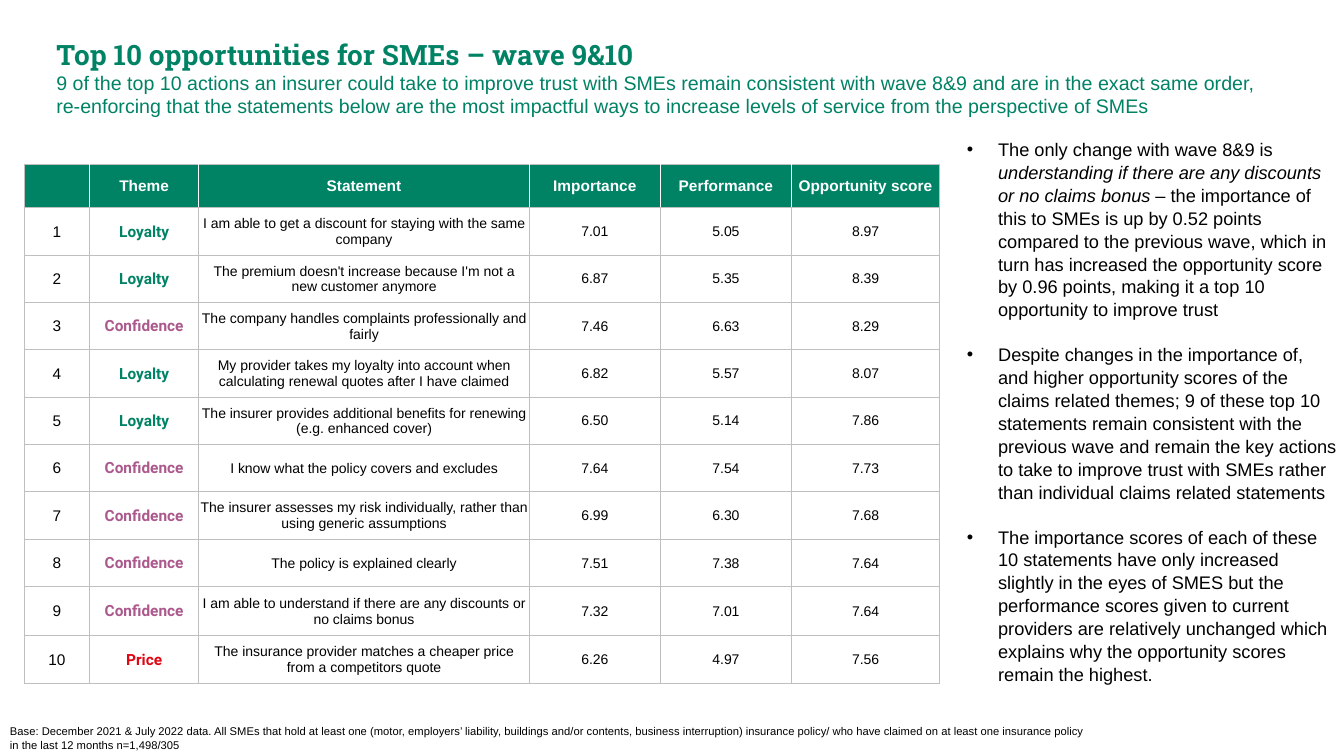
"""Build the slide on the top 10 trust opportunities for SMEs."""
from dataclasses import dataclass

from lxml.etree import SubElement
from pptx import Presentation
from pptx.dml.color import RGBColor as Color
from pptx.enum.text import MSO_ANCHOR as Anchor, PP_ALIGN as Align
from pptx.oxml.ns import qn
from pptx.util import Inches, Pt

TITLE = "Top 10 opportunities for SMEs – wave 9&10"
SUBTITLE = (
    "9 of the top 10 actions an insurer could take to improve trust with SMEs remain consistent "
    "with wave 8&9 and are in the exact same order, re-enforcing that the statements below are the "
    "most impactful ways to increase levels of service from the perspective of SMEs"
)
HEADERS = ["", "Theme", "Statement", "Importance", "Performance", "Opportunity score"]
OPPORTUNITIES = [
    ("Loyalty", "I am able to get a discount for staying with the same company", "7.01", "5.05", "8.97"),
    ("Loyalty", "The premium doesn't increase because I'm not a new customer anymore", "6.87", "5.35", "8.39"),
    ("Confidence", "The company handles complaints professionally and fairly", "7.46", "6.63", "8.29"),
    ("Loyalty", "My provider takes my loyalty into account when calculating renewal quotes after I have claimed",
     "6.82", "5.57", "8.07"),
    ("Loyalty", "The insurer provides additional benefits for renewing (e.g. enhanced cover)",
     "6.50", "5.14", "7.86"),
    ("Confidence", "I know what the policy covers and excludes", "7.64", "7.54", "7.73"),
    ("Confidence", "The insurer assesses my risk individually, rather than using generic assumptions",
     "6.99", "6.30", "7.68"),
    ("Confidence", "The policy is explained clearly", "7.51", "7.38", "7.64"),
    ("Confidence", "I am able to understand if there are any discounts or no claims bonus",
     "7.32", "7.01", "7.64"),
    ("Price", "The insurance provider matches a cheaper price from a competitors quote",
     "6.26", "4.97", "7.56"),
]
COMMENTS = [
    [("The only change with wave 8&9 is ", False),
     ("understanding if there are any discounts or no claims bonus ", True),
     ("– the importance of this to SMEs is up by 0.52 points compared to the previous wave, which in "
      "turn has increased the opportunity score by 0.96 points, making it a top 10 opportunity to "
      "improve trust", False)],
    [("Despite changes in the importance of, and higher opportunity scores of the claims related "
      "themes; 9 of these top 10 statements remain consistent with the previous wave and remain the "
      "key actions to take to improve trust with SMEs rather than individual claims related "
      "statements", False)],
    [("The importance scores of each of these 10 statements have only increased slightly in the eyes "
      "of SMES but the performance scores given to current providers are relatively unchanged which "
      "explains why the opportunity scores remain the highest.", False)],
]
BASE_NOTE = (
    "Base: December 2021 & July 2022 data. All SMEs that hold at least one (motor, employers’ "
    "liability, buildings and/or contents, business interruption) insurance policy/ who have claimed "
    "on at least one insurance policy in the last 12 months n=1,498/305"
)
COLUMN_WIDTHS = [0.65, 1.08, 3.28, 1.3, 1.3, 1.47]
ROW_HEIGHTS = [0.43] + [0.47] * 8 + [0.49, 0.47]


@dataclass(frozen=True)
class Theme:
    """Colours, fonts and type sizes."""
    green: str = "008265"
    purple: str = "AB588C"
    red: str = "E20613"
    black: str = "000000"
    white: str = "FFFFFF"
    grey: str = "BFBFBF"
    body_font: str = "Arial"
    title_font: str = "Roboto Slab"
    label_font: str = "Roboto"
    title: int = 20
    subtitle: int = 14
    comment: int = 13
    label: int = 11
    statement: int = 10
    note: int = 8


THEME = Theme()
LABEL_COLOURS = {"Loyalty": THEME.green, "Confidence": THEME.purple, "Price": THEME.red}


def style(paragraph, size, colour=THEME.black, font=THEME.body_font, bold=False):
    for run in paragraph.runs:
        run.font.size = Pt(size)
        run.font.name = font
        run.font.bold = bold
        run.font.color.rgb = Color.from_string(colour)


def add_text_box(slide, left, top, width, height, inset=(0.1, 0.05)):
    frame = slide.shapes.add_textbox(*map(Inches, (left, top, width, height))).text_frame
    frame.word_wrap = True
    frame.margin_left = frame.margin_right = Inches(inset[0])
    frame.margin_top = frame.margin_bottom = Inches(inset[1])
    return frame


def add_bullet(paragraph, indent):
    properties = paragraph._p.get_or_add_pPr()
    properties.set("marL", str(Inches(indent)))
    properties.set("indent", str(-Inches(indent)))
    SubElement(properties, qn("a:buFont")).set("typeface", THEME.body_font)
    SubElement(properties, qn("a:buChar")).set("char", "•")


def set_borders(cell, **white_sides):
    properties = cell._tc.get_or_add_tcPr()
    for position, side in enumerate("LRTB"):
        white = white_sides.get(side, False)
        line = properties.makeelement(qn(f"a:ln{side}"), {"w": str(Pt(1 if white else 0.75))})
        fill = SubElement(line, qn("a:solidFill"))
        SubElement(fill, qn("a:srgbClr")).set("val", THEME.white if white else THEME.grey)
        properties.insert(position, line)


def fill_cell(cell, text, fill, **text_style):
    cell.text = text
    cell.vertical_anchor = Anchor.MIDDLE
    cell.margin_left = cell.margin_right = cell.margin_top = Inches(0.01)
    cell.margin_bottom = 0
    cell.fill.solid()
    cell.fill.fore_color.rgb = Color.from_string(fill)
    paragraph = cell.text_frame.paragraphs[0]
    paragraph.alignment = Align.CENTER
    style(paragraph, **text_style)


def add_score_table(slide):
    frame = slide.shapes.add_table(
        len(ROW_HEIGHTS), len(COLUMN_WIDTHS), Inches(0.24), Inches(1.63),
        Inches(sum(COLUMN_WIDTHS)), Inches(sum(ROW_HEIGHTS)))
    table = frame.table
    table.horz_banding = False
    for column, width in zip(table.columns, COLUMN_WIDTHS):
        column.width = Inches(width)
    for row, height in zip(table.rows, ROW_HEIGHTS):
        row.height = Inches(height)

    last = len(HEADERS) - 1
    for index, header in enumerate(HEADERS):
        cell = table.cell(0, index)
        fill_cell(cell, header, THEME.green, size=THEME.label, colour=THEME.white, bold=True)
        set_borders(cell, L=index > 0, R=index < last)

    for rank, opportunity in enumerate(OPPORTUNITIES, 1):
        label_style = dict(size=THEME.label, colour=LABEL_COLOURS[opportunity[0]],
                           font=THEME.label_font, bold=True)
        styles = [dict(size=THEME.label), label_style] + [dict(size=THEME.statement)] * 4
        for index, (text, text_style) in enumerate(zip((str(rank), *opportunity), styles)):
            cell = table.cell(rank, index)
            fill_cell(cell, text, THEME.white, **text_style)
            set_borders(cell)


def add_comments(slide):
    frame = add_text_box(slide, 9.59, 1.36, 3.67, 5.53, inset=(0, 0))
    for index, comment in enumerate(COMMENTS):
        paragraph = frame.add_paragraph() if index else frame.paragraphs[0]
        paragraph.line_spacing = 1.05
        if index:
            paragraph.space_before = Pt(15.6)
        add_bullet(paragraph, 0.31)
        for text, italic in comment:
            run = paragraph.add_run()
            run.text = text
            run.font.italic = italic
        style(paragraph, THEME.comment)


def main():
    presentation = Presentation()
    presentation.slide_width, presentation.slide_height = Inches(13.33), Inches(7.5)
    slide = presentation.slides.add_slide(presentation.slide_layouts[6])

    add_comments(slide)
    heading = add_text_box(slide, 0.46, 0.32, 12.28, 0.91)
    heading.text = f"{TITLE}\n{SUBTITLE}"
    style(heading.paragraphs[0], THEME.title, THEME.green, THEME.title_font, bold=True)
    style(heading.paragraphs[1], THEME.subtitle, THEME.green)
    add_score_table(slide)
    note = add_text_box(slide, 0, 7.14, 10.91, 0.35)
    note.text = BASE_NOTE
    style(note.paragraphs[0], THEME.note)
    presentation.save("out.pptx")


if __name__ == "__main__":
    main()
